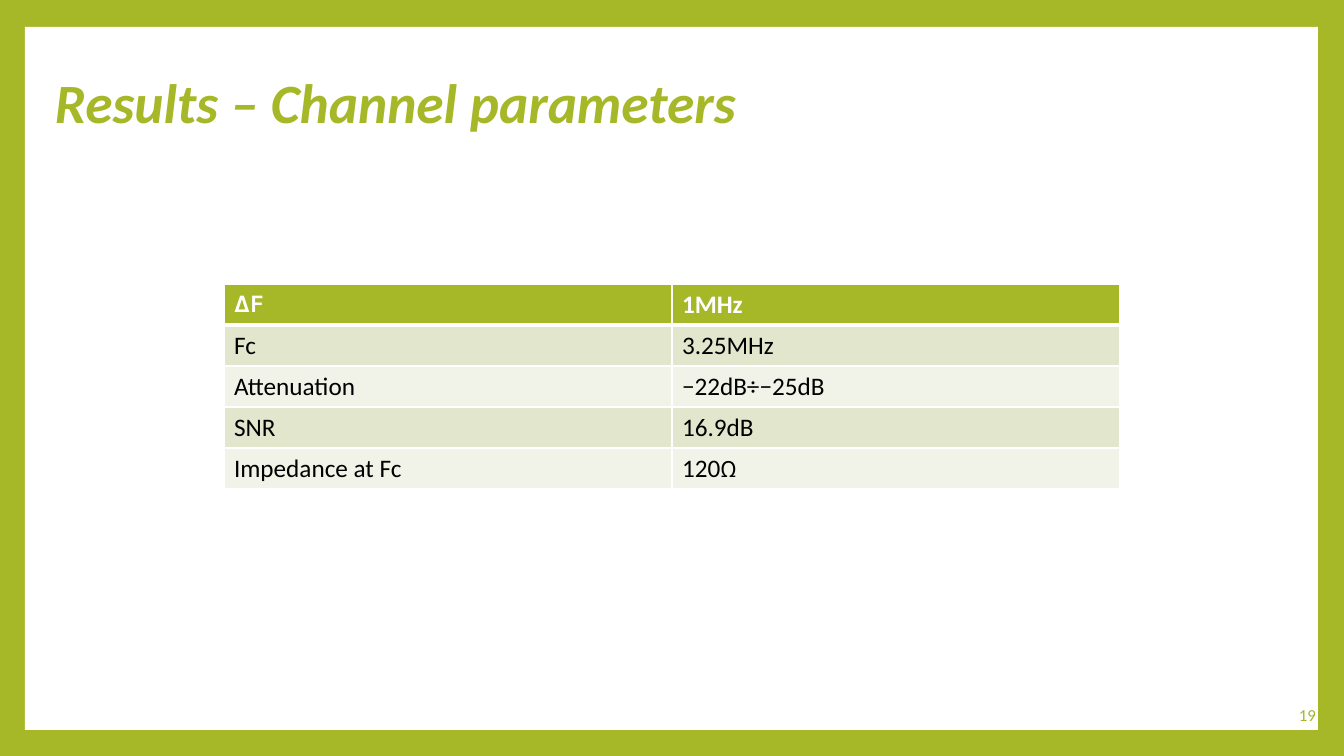
from lxml import etree
from pptx import Presentation
from pptx.dml.color import RGBColor
from pptx.enum.shapes import MSO_SHAPE
from pptx.enum.text import MSO_ANCHOR, PP_ALIGN
from pptx.oxml.ns import qn
from pptx.util import Emu, Pt

RECT = MSO_SHAPE.RECTANGLE
TOP, MIDDLE = MSO_ANCHOR.TOP, MSO_ANCHOR.MIDDLE
LEFT, RIGHT = PP_ALIGN.LEFT, PP_ALIGN.RIGHT

GREEN = RGBColor(0xA6, 0xB7, 0x27)
WHITE = RGBColor(0xFF, 0xFF, 0xFF)
BLACK = RGBColor(0x00, 0x00, 0x00)
BANDS = RGBColor(0xF1, 0xF3, 0xE8), RGBColor(0xE1, 0xE6, 0xCD)

SCALE = 914400 / 100.8
ROW, COL = 41, 448
GREEK = "ΔΩ"

ROWS = [
    (["ΔF"], ["1MHz"]),
    (["Fc"], ["3.25MHz"]),
    (["Attenuation"], ["−22dB÷−25dB"]),
    (["SNR"], ["16.9dB"]),
    (["Impedance at Fc"], ["120", "Ω"]),
]


def px(*nums):
    return [Emu(round(n * SCALE)) for n in nums]


def style(run, size, color, bold=False, italic=False, face="Calibri"):
    font = run.font
    font.name, font.size = face, Pt(size)
    font.bold, font.italic = bold, italic
    font.color.rgb = color


def add_panel(slide, *box):
    panel = slide.shapes.add_shape(RECT, *px(*box))
    panel.shadow.inherit = False
    panel.fill.solid()
    panel.fill.fore_color.rgb = WHITE
    panel.line.fill.background()


def add_label(slide, box, text, size, anchor=TOP, align=LEFT,
              space=1.0, bold=False, italic=False):
    frame = slide.shapes.add_textbox(*px(*box)).text_frame
    frame.word_wrap = True
    frame.vertical_anchor = anchor
    pad = px(10)[0]
    frame.margin_left = frame.margin_right = pad
    frame.margin_top = frame.margin_bottom = pad
    frame.text = text
    para = frame.paragraphs[0]
    para.alignment, para.line_spacing = align, space
    style(para.runs[0], size, GREEN, bold, italic)


def set_edges(cell, widths):
    props = cell._tc.get_or_add_tcPr()
    for spot, (side, width) in enumerate(widths.items()):
        edge = etree.Element(qn("a:ln" + side), w=str(Pt(width)))
        fill = etree.SubElement(edge, qn("a:solidFill"))
        etree.SubElement(fill, qn("a:srgbClr"), val=str(WHITE))
        props.insert(spot, edge)


def fill_cell(cell, parts, row):
    head = row == 0
    cell.fill.solid()
    cell.fill.fore_color.rgb = GREEN if head else BANDS[row % 2]
    para = cell.text_frame.paragraphs[0]
    for part in parts:
        run = para.add_run()
        run.text = part
        face = "Karla" if part[0] in GREEK else "Calibri"
        style(run, 18, WHITE if head else BLACK, bold=head, face=face)
    # The rule below the header is thicker than the rest
    set_edges(cell, {"L": 1, "R": 1, "T": 3 if row == 1 else 1,
                     "B": 3 if head else 1})


def add_grid(slide, left, top, rows):
    count, wide = len(rows), len(rows[0])
    box = px(left, top, wide * COL, count * ROW)
    table = slide.shapes.add_table(count, wide, *box).table
    for col in table.columns:
        col.width = px(COL)[0]
    for r, cells in enumerate(rows):
        table.rows[r].height = px(ROW)[0]
        for c, parts in enumerate(cells):
            fill_cell(table.cell(r, c), parts, r)


def main():
    deck = Presentation()
    deck.slide_width, deck.slide_height = px(1344, 756)
    slide = deck.slides.add_slide(deck.slide_layouts[6])

    # Green frame around a white panel
    back = slide.background.fill
    back.solid()
    back.fore_color.rgb = GREEN
    add_panel(slide, 25, 27, 1293, 703)

    # Title
    add_label(slide, (45, 66, 1252, 85), "Results – Channel parameters", 39.6,
              space=0.9, bold=True, italic=True)

    # Channel parameters
    add_grid(slide, 224, 284, ROWS)

    # Page number
    add_label(slide, (1245, 686, 81, 57), "19", 12, MIDDLE, RIGHT)

    deck.save("out.pptx")


if __name__ == "__main__":
    main()
